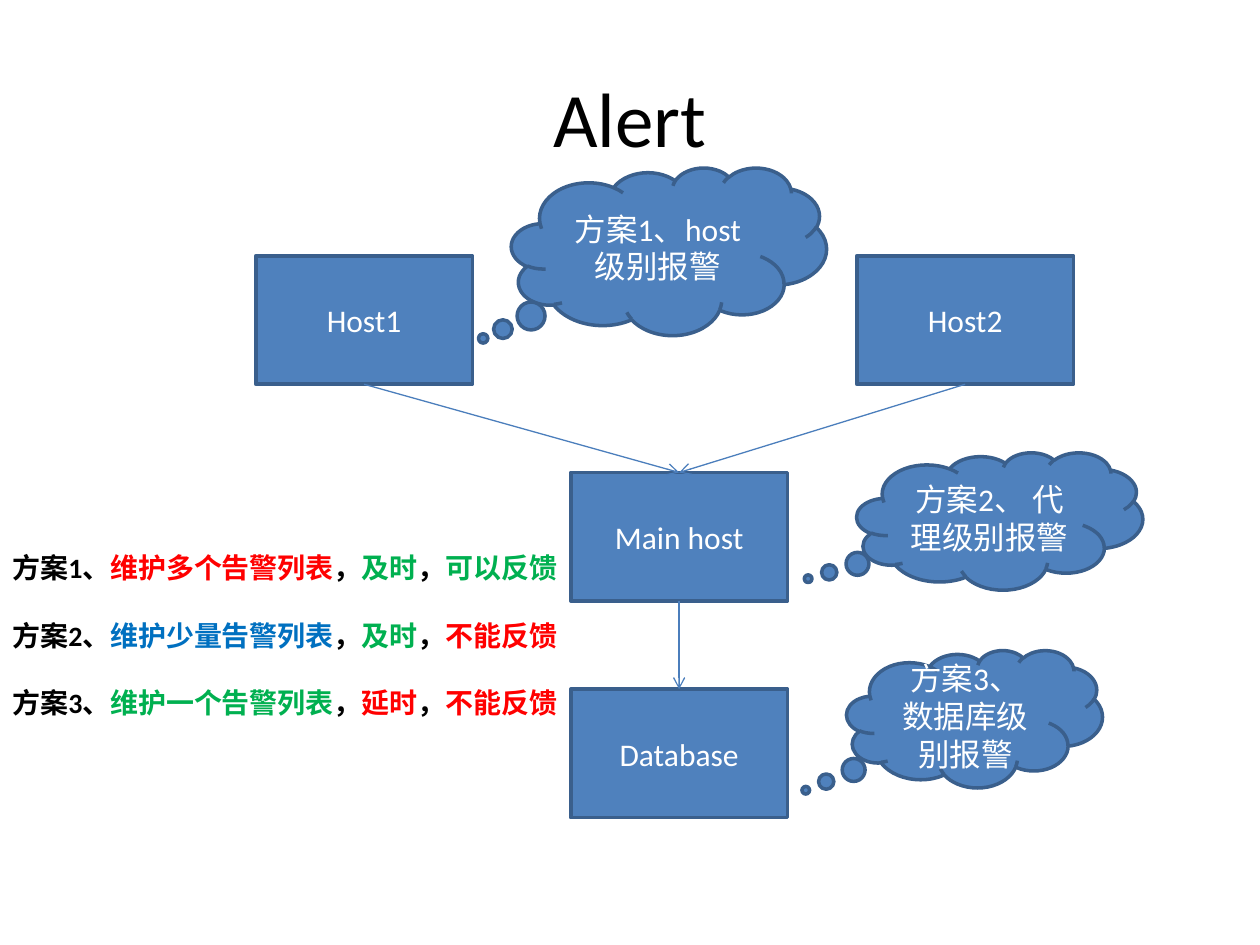
from dataclasses import dataclass

from lxml import etree
from pptx import Presentation
from pptx.dml.color import RGBColor
from pptx.enum import shapes, text
from pptx.oxml.ns import qn
from pptx.util import Inches, Pt


@dataclass(frozen=True)
class Theme:
    font: str = "Calibri"
    title_size: int = 44
    label_size: int = 18
    note_size: int = 16
    black: str = "000000"
    white: str = "FFFFFF"
    fill: str = "4F81BD"
    outline: str = "3A5F8C"
    arrow: str = "4B7EBC"
    red: str = "FF0000"
    green: str = "00B050"
    blue: str = "0070C0"


THEME = Theme()
HOST_SIZE = (1.72, 1.02)
TOP, BOTTOM = 0, 2

PLANS = [
    ("方案1、", ("维护多个告警列表", THEME.red), ("及时", THEME.green), ("可以反馈", THEME.green)),
    ("方案2、", ("维护少量告警列表", THEME.blue), ("及时", THEME.green), ("不能反馈", THEME.red)),
    ("方案3、", ("维护一个告警列表", THEME.green), ("延时", THEME.red), ("不能反馈", THEME.red)),
]


def rgb(color):
    return RGBColor.from_string(color)


def style_font(font, size, color, bold=False):
    font.name = THEME.font
    font.size = Pt(size)
    font.bold = bold
    font.color.rgb = rgb(color)


def write_centred(shape, words, size, color):
    frame = shape.text_frame
    frame.word_wrap = True
    frame.vertical_anchor = text.MSO_ANCHOR.MIDDLE
    paragraph = frame.paragraphs[0]
    paragraph.text = words
    paragraph.alignment = text.PP_ALIGN.CENTER
    style_font(paragraph.font, size, color)


def add_title(slide, words):
    title = slide.shapes.add_textbox(Inches(0.5), Inches(0.3), Inches(9), Inches(1.25))
    write_centred(title, words, THEME.title_size, THEME.black)


def add_labelled(slide, kind, box, words):
    shape = slide.shapes.add_shape(kind, *map(Inches, box))
    shape.shadow.inherit = False
    shape.fill.solid()
    shape.fill.fore_color.rgb = rgb(THEME.fill)
    shape.line.color.rgb = rgb(THEME.outline)
    shape.line.width = Pt(2)
    write_centred(shape, words, THEME.label_size, THEME.white)
    return shape


def add_host(slide, left, top, name):
    return add_labelled(slide, shapes.MSO_SHAPE.RECTANGLE, (left, top, *HOST_SIZE), name)


def add_cloud(slide, box, tail, words):
    """Add a thought cloud; tail is its tip as shares of the size, from the centre."""
    cloud = add_labelled(slide, shapes.MSO_SHAPE.CLOUD_CALLOUT, box, words)
    cloud.adjustments[0], cloud.adjustments[1] = tail


def add_arrow(slide, source, target):
    """Join the bottom of source to the top of target."""
    arrow = slide.shapes.add_connector(shapes.MSO_CONNECTOR.STRAIGHT, 0, 0, 0, 0)
    arrow.begin_connect(source, BOTTOM)
    arrow.end_connect(target, TOP)
    arrow.line.color.rgb = rgb(THEME.arrow)
    arrow.line.width = Pt(0.75)
    properties = arrow._element.spPr
    etree.SubElement(properties.find(qn("a:ln")), qn("a:tailEnd"), type="arrow")
    etree.SubElement(properties, qn("a:effectLst"))


def add_plan_notes(slide):
    notes = slide.shapes.add_textbox(Inches(0), Inches(4.32), Inches(4.61), Inches(2.25))
    frame = notes.text_frame
    frame.word_wrap = True
    for index, (name, upkeep, speed, feedback) in enumerate(PLANS):
        paragraph = frame.paragraphs[0] if index == 0 else frame.add_paragraph()
        if index:
            paragraph.space_before = Pt(19.5)
        comma = ("，", THEME.black)
        for words, color in ((name, THEME.black), upkeep, comma, speed, comma, feedback):
            run = paragraph.add_run()
            run.text = words
            style_font(run.font, THEME.note_size, color, bold=True)


def main():
    deck = Presentation()
    deck.slide_width, deck.slide_height = Inches(10), Inches(7.5)
    slide = deck.slides.add_slide(deck.slide_layouts[6])

    add_title(slide, "Alert")
    host1 = add_host(slide, 2.03, 2.03, "Host1")
    host2 = add_host(slide, 6.8, 2.03, "Host2")
    main_host = add_host(slide, 4.53, 3.75, "Main host")
    database = add_host(slide, 4.53, 5.47, "Database")
    for source, target in ((host1, main_host), (host2, main_host), (main_host, database)):
        add_arrow(slide, source, target)

    add_cloud(slide, (6.72, 5.16, 2.03, 1.09), (-0.66, 0.52), "方案3、 数据库级别报警")
    add_cloud(slide, (6.8, 3.59, 2.27, 1.09), (-0.67, 0.42), "方案2、 代理级别报警")
    add_cloud(slide, (4.06, 1.33, 2.5, 1.33), (-0.59, 0.52), "方案1、host级别报警")
    add_plan_notes(slide)

    deck.save("out.pptx")


if __name__ == "__main__":
    main()
